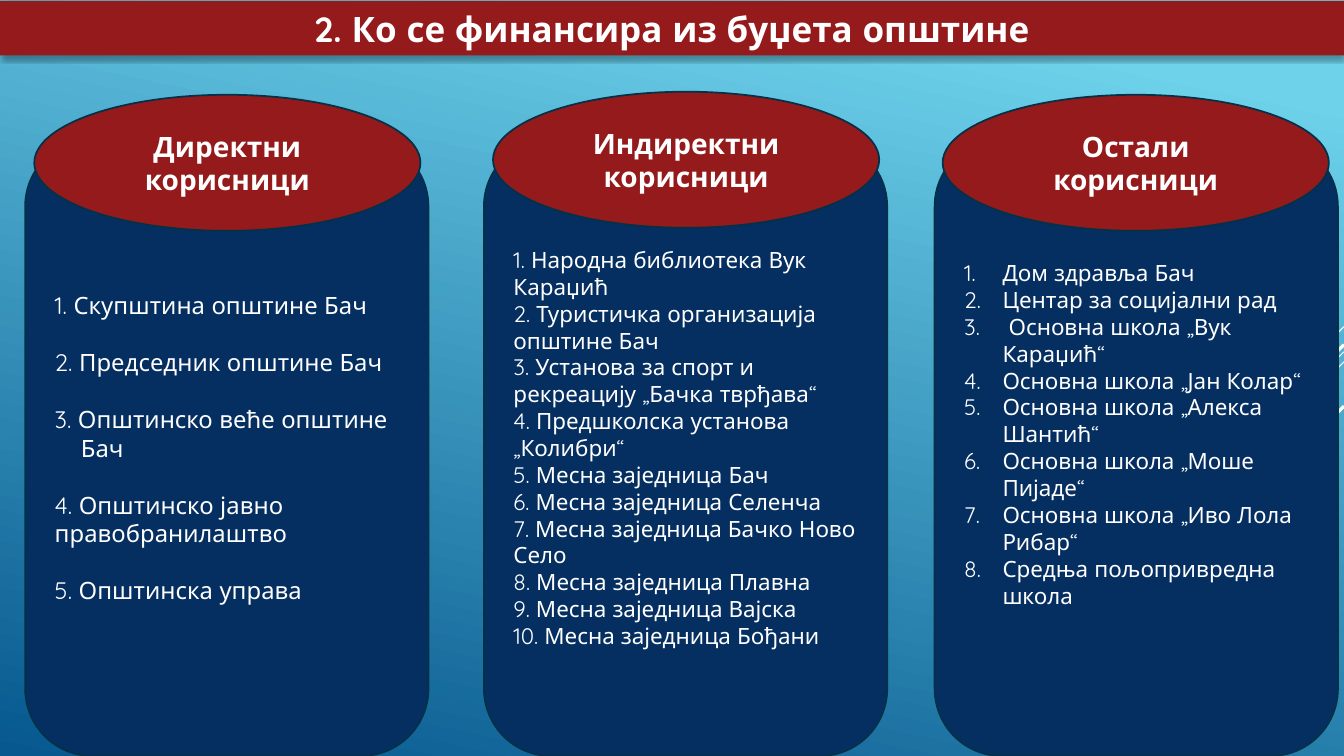
"""Builds a slide on who is financed from the municipal budget."""
from dataclasses import dataclass

from lxml.etree import SubElement
from pptx import Presentation
from pptx.dml.color import RGBColor
from pptx.enum.shapes import MSO_CONNECTOR, MSO_SHAPE
from pptx.enum.text import MSO_ANCHOR, MSO_AUTO_SIZE, PP_ALIGN
from pptx.oxml import parse_xml
from pptx.oxml.ns import nsdecls, qn
from pptx.util import Pt

PIXEL = 9144


@dataclass(frozen=True)
class Theme:
    font: str = "Quicksand"
    white: str = "FFFFFF"
    red: str = "941A1B"
    navy: str = "052F61"
    outline: str = "043148"
    sky: str = "6ED2EB"
    deep: str = "06588E"
    title_size: int = 25
    heading_size: int = 20
    large_size: int = 17
    body_size: int = 16
    outline_width: float = 1.25


class SlideBuilder:
    def __init__(self, page, theme):
        self.page = page
        self.theme = theme

    def background(self):
        fill = self.page.background.fill
        fill.gradient()
        fill.gradient_angle = 258
        stops = ((0.1, self.theme.sky), (1, self.theme.deep))
        for stop, (position, color) in zip(fill.gradient_stops, stops):
            stop.position = position
            stop.color.rgb = RGBColor.from_string(color)

    def place(self, box, left, top, width, height):
        box.left, box.top = left * PIXEL, top * PIXEL
        box.width, box.height = width * PIXEL, height * PIXEL

    def paint(self, box, color):
        box.fill.solid()
        box.fill.fore_color.rgb = RGBColor.from_string(color)

    def add_text(self, para, text, size, bold=False, align=PP_ALIGN.LEFT):
        para.alignment = align
        span = para.add_run()
        span.text = text
        span.font.name = self.theme.font
        span.font.size = Pt(size)
        span.font.bold = bold
        span.font.color.rgb = RGBColor.from_string(self.theme.white)

    def title(self, text, left, top, width, height):
        box = self.page.shapes.title
        self.place(box, left, top, width, height)
        properties = box.element.spPr
        properties.insert(1, parse_xml(
            f'<a:prstGeom {nsdecls("a")} prst="roundRect"><a:avLst/></a:prstGeom>'))
        self.paint(box, self.theme.red)
        properties.append(parse_xml(
            f'<a:effectLst {nsdecls("a")}><a:outerShdw blurRad="{Pt(3.5)}" '
            f'dist="{Pt(2.2)}" dir="5400000" rotWithShape="0"><a:srgbClr val="000000">'
            '<a:alpha val="32000"/></a:srgbClr></a:outerShdw></a:effectLst>'))
        frame = box.text_frame
        frame.word_wrap = True
        frame.auto_size = MSO_AUTO_SIZE.NONE
        frame.vertical_anchor = MSO_ANCHOR.MIDDLE
        self.add_text(frame.paragraphs[0], text, self.theme.title_size, True, PP_ALIGN.CENTER)

    def ray(self, start, end, width):
        points = [value * PIXEL for value in (*start, *end)]
        line = self.page.shapes.add_connector(MSO_CONNECTOR.STRAIGHT, *points)
        line.line.color.rgb = RGBColor.from_string(self.theme.white)
        line.line.width = Pt(width)
        SubElement(line.element.spPr, qn("a:effectLst"))

    def shape(self, kind, color, left, top, width, height):
        box = self.page.shapes.add_shape(
            kind, *(value * PIXEL for value in (left, top, width, height)))
        box.shadow.inherit = False
        self.paint(box, color)
        box.line.color.rgb = RGBColor.from_string(self.theme.outline)
        box.line.width = Pt(self.theme.outline_width)
        box.text_frame.word_wrap = True
        box.text_frame.vertical_anchor = MSO_ANCHOR.MIDDLE
        return box

    def heading(self, text, left, top):
        box = self.shape(MSO_SHAPE.OVAL, self.theme.red, left, top, 383, 135)
        self.add_text(box.text_frame.paragraphs[0], text, self.theme.heading_size,
                      True, PP_ALIGN.CENTER)

    def hang(self, para, indent):
        properties = para._p.get_or_add_pPr()
        properties.set("marL", str(indent * PIXEL))
        properties.set("indent", str(-indent * PIXEL))
        return properties

    def panel(self, items, left, size, gap=0, numbered=False, hanging=()):
        box = self.shape(MSO_SHAPE.ROUNDED_RECTANGLE, self.theme.navy, left, 138, 400, 612)
        frame = box.text_frame
        for index, item in enumerate(items):
            para = frame.add_paragraph() if index else frame.paragraphs[0]
            self.add_text(para, item, size)
            if gap and index:
                para.space_before = Pt(gap)
            if index in hanging:
                self.hang(para, 26)
            if numbered:
                SubElement(self.hang(para, 38), qn("a:buAutoNum"), type="arabicPeriod")
        return box


def main():
    theme = Theme()
    deck = Presentation()
    deck.slide_width, deck.slide_height = 1333 * PIXEL, 750 * PIXEL
    builder = SlideBuilder(deck.slides.add_slide(deck.slide_layouts[5]), theme)
    builder.background()
    builder.title("2. Ко се финансира из буџета општине", 0, 1, 1333, 54)

    rays = ((324, 100, 0.75), (349, 326, 0.75), (359, 207, 0.75),
            (342, 191, 2.25), (403, 139, 2.25))
    for top, reach, width in rays:
        builder.ray((1333, top), (1333 - reach, top + reach), width)

    direct = (
        "1. Скупштина општине Бач",
        "2. Председник општине Бач",
        "3. Општинско веће општине Бач",
        "4. Општинско јавно правобранилаштво",
        "5. Општинска управа",
    )
    indirect = (
        "1. Народна библиотека Вук Караџић",
        "2. Туристичка организација општине Бач",
        "3. Установа за спорт и рекреацију „Бачка тврђава“",
        "4. Предшколска установа „Колибри“",
        "5. Месна заједница Бач",
        "6. Месна заједница Селенча",
        "7. Месна заједница Бачко Ново Село",
        "8. Месна заједница Плавна",
        "9. Месна заједница Вајска",
        "10. Месна заједница Бођани",
    )
    others = (
        "Дом здравља Бач",
        "Центар за социјални рад",
        " Основна школа „Вук Караџић“",
        "Основна школа „Јан Колар“",
        "Основна школа „Алекса Шантић“",
        "Основна школа „Моше Пијаде“",
        "Основна школа „Иво Лола Рибар“",
        "Средња пољопривредна школа",
    )
    builder.panel(direct, 25, theme.large_size, gap=20.4, hanging=(2,))
    builder.panel(indirect, 480, theme.body_size)
    other_panel = builder.panel(others, 927, theme.body_size, numbered=True)
    other_panel.text_frame.margin_bottom = 32 * PIXEL

    builder.heading("Директни корисници", 34, 94)
    builder.heading("Индиректни корисници", 489, 91)
    builder.heading("Остали корисници", 935, 94)
    deck.save("out.pptx")


if __name__ == "__main__":
    main()
